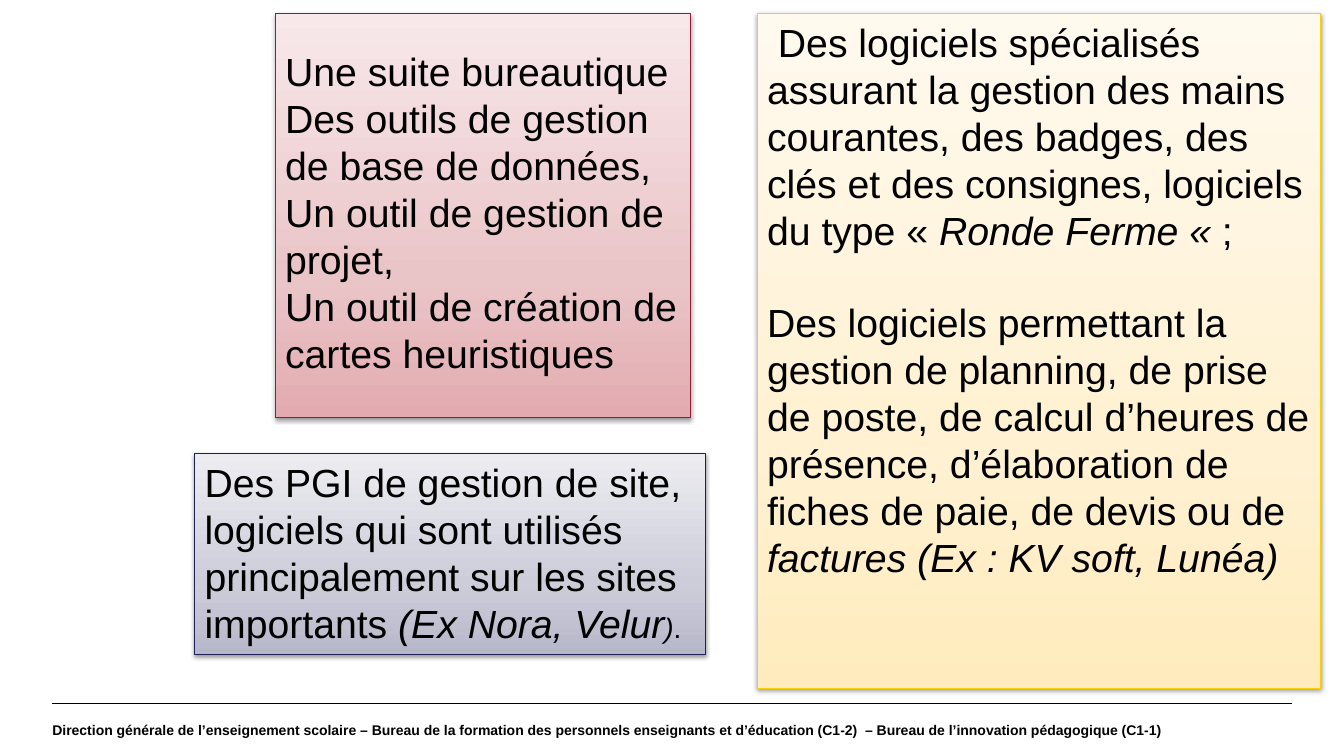
import copy

import pptx
import pptx.dml.color
import pptx.enum.shapes
import pptx.enum.text
import pptx.oxml
import pptx.oxml.ns
import pptx.oxml.xmlchemy
import pptx.util

WIDTH = pptx.util.Inches(13.33)
HEIGHT = pptx.util.Inches(7.5)
BLACK = "000000"
LARGE = {"name": "Arial", "size": pptx.util.Pt(28)}
ITALIC = {**LARGE, "italic": True}
SMALL = {"name": "Arial", "size": pptx.util.Pt(20)}
FOOTER = {"name": "Arial", "size": pptx.util.Pt(10), "bold": True}
NO_MARGINS = dict.fromkeys(("margin_left", "margin_top", "margin_right", "margin_bottom"), 0)
SHADOW = (
    '<a:outerShdw xmlns:a="http://schemas.openxmlformats.org/drawingml/2006/main" '
    'blurRad="39370" dist="20320" dir="5400000" rotWithShape="0">'
    '<a:srgbClr val="000000"><a:alpha val="38000"/></a:srgbClr></a:outerShdw>'
)


def color(code):
    return pptx.dml.color.RGBColor.from_string(code)


def across(percent):
    return round(WIDTH * percent / 100)


def down(percent):
    return round(HEIGHT * percent / 100)


def place(left, top, width, height):
    """Turn percentages of the slide into lengths."""
    return across(left), down(top), across(width), down(height)


def apply(target, formats):
    for name, value in formats.items():
        setattr(target, name, value)


def write(frame, paragraphs, frame_format, gap=0):
    """Fill a text frame; each paragraph is a list of (text, font format)."""
    apply(frame, {"word_wrap": True, **frame_format})
    for index, spans in enumerate(paragraphs):
        para = frame.add_paragraph() if index else frame.paragraphs[0]
        para.alignment = pptx.enum.text.PP_ALIGN.LEFT
        if index and gap:
            para.space_before = pptx.util.Pt(gap)
        for text, font_format in spans:
            span = para.add_run()
            span.text = text
            apply(span.font, font_format)
            span.font.color.rgb = color(BLACK)


def add_panel(page, area, shades, border, paragraphs, anchor, gap=0, **margins):
    """Add a shaded rectangle, darkest at the bottom, with a soft shadow."""
    box = page.shapes.add_shape(pptx.enum.shapes.MSO_SHAPE.RECTANGLE, *place(*area))
    box.fill.gradient()
    box.fill.gradient_angle = 90
    stops = box._element.spPr.find(".//" + pptx.oxml.ns.qn("a:gsLst"))
    stops.append(copy.deepcopy(stops[-1]))
    for stop, position, shade in zip(box.fill.gradient_stops, (0, 0.35, 1), shades):
        stop.position = position
        stop.color.rgb = color(shade)
    box.line.color.rgb = color(border)
    box.line.width = pptx.util.Pt(0.75)
    box.shadow.inherit = False
    effects = box._element.spPr.find(pptx.oxml.ns.qn("a:effectLst"))
    effects.append(pptx.oxml.parse_xml(SHADOW))
    write(box.text_frame, paragraphs, {"vertical_anchor": anchor, **margins}, gap)


def add_footer(page, text):
    """Add the rule and the line of text below it."""
    left, top = 3.9, 93.07
    rule = page.shapes.add_connector(
        pptx.enum.shapes.MSO_CONNECTOR.STRAIGHT,
        across(left), down(top), across(100 - left), down(top),
    )
    rule.line.color.rgb = color(BLACK)
    rule.line.width = pptx.util.Pt(0.8)
    rule._element.spPr.append(pptx.oxml.xmlchemy.OxmlElement("a:effectLst"))
    box = page.shapes.add_textbox(*place(left, top, 93.32, 100 - top))
    middle = pptx.enum.text.MSO_ANCHOR.MIDDLE
    write(box.text_frame, [[(text, FOOTER)]], {"vertical_anchor": middle, **NO_MARGINS})


def main():
    deck = pptx.Presentation()
    deck.slide_width, deck.slide_height = WIDTH, HEIGHT
    page = deck.slides.add_slide(deck.slide_layouts[6])
    top = pptx.enum.text.MSO_ANCHOR.TOP

    # Footer
    add_footer(
        page,
        "Direction générale de l’enseignement scolaire – Bureau de la formation des "
        "personnels enseignants et d’éducation (C1-2)  – Bureau de l’innovation "
        "pédagogique (C1-1)",
    )

    # Office tools
    tools = (
        "Une suite bureautique",
        "Des outils de gestion de base de données,",
        "Un outil de gestion de projet,",
        "Un outil de création de cartes heuristiques",
    )
    add_panel(
        page, (20.48, 1.73, 30.91, 53.47), ("E3ABB0", "EAC5C8", "F8E8EA"), "8C1F34",
        [[(tool, LARGE)] for tool in tools], top, margin_top=pptx.util.Inches(0.34),
    )

    # Specialised software
    add_panel(
        page, (56.34, 1.73, 41.94, 89.33), ("FFEBBD", "FFF1D1", "FFF9EE"), "F9D000",
        [
            [
                (" Des logiciels spécialisés assurant la gestion des mains courantes, "
                 "des badges, des clés et des consignes, logiciels du type « ", LARGE),
                ("Ronde Ferme « ", ITALIC),
                (";", LARGE),
            ],
            [
                ("Des logiciels permettant la gestion de planning, de prise de poste, "
                 "de calcul d’heures de présence, d’élaboration de fiches de paie, "
                 "de devis ou de ", LARGE),
                ("factures (Ex : KV soft, Lunéa)", ITALIC),
            ],
        ],
        top, gap=32,
    )

    # Site management
    add_panel(
        page, (14.48, 60, 38.03, 26.53), ("B7B7CA", "CDCDDA", "ECECF1"), "1F1F59",
        [[
            ("Des PGI de gestion de site, logiciels qui sont utilisés principalement "
             "sur les sites importants ", LARGE),
            ("(Ex Nora, Velur", ITALIC),
            (")", {**SMALL, "italic": True}),
            (".", SMALL),
        ]],
        top,
    )

    deck.save("out.pptx")


if __name__ == "__main__":
    main()
